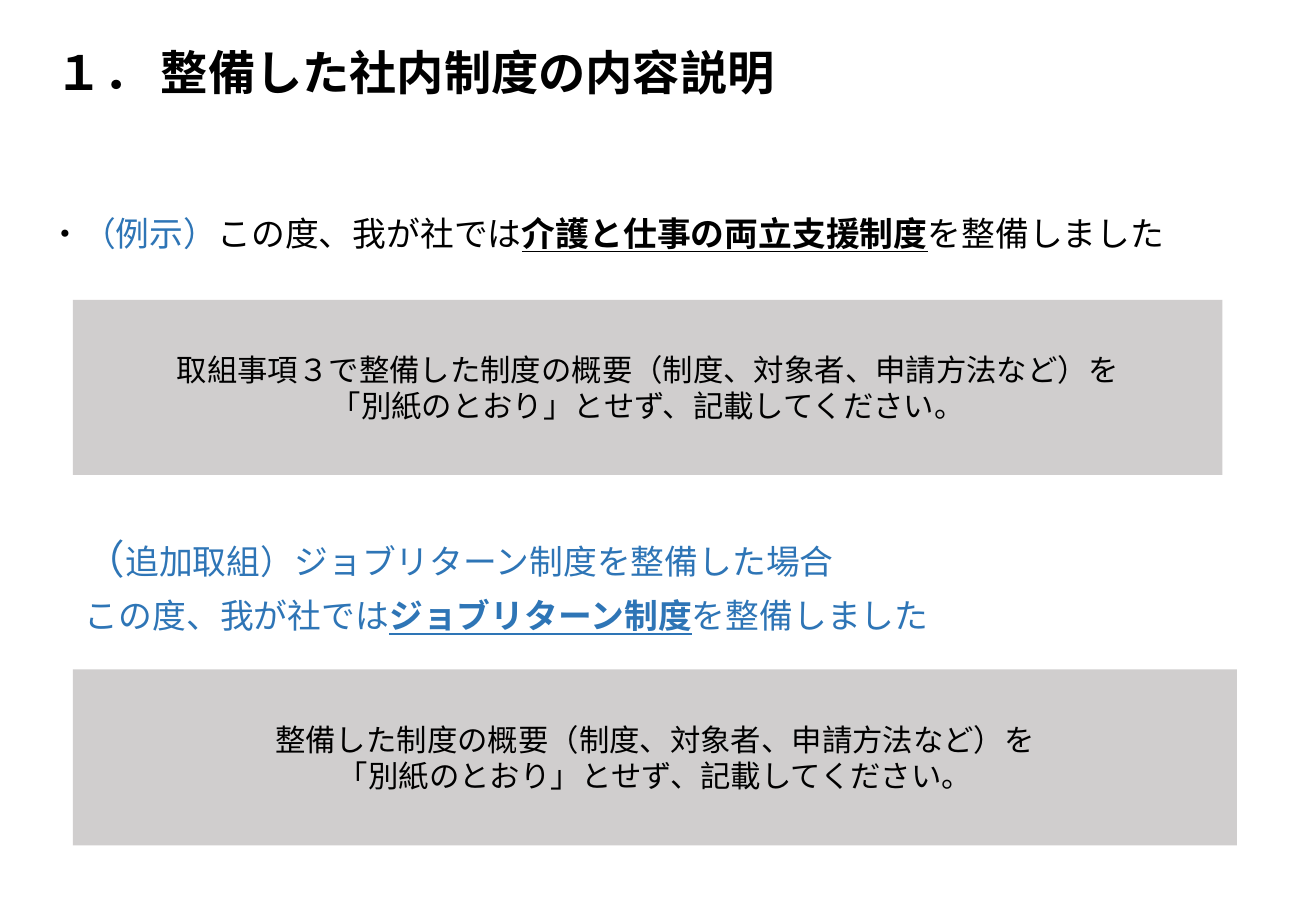
from pptx import Presentation
from pptx.dml.color import RGBColor
from pptx.enum.shapes import MSO_SHAPE
from pptx.enum.text import MSO_ANCHOR as Anchor, PP_ALIGN as Align
from pptx.util import Inches, Pt

COLORS = {"black": "000000", "blue": "2E75B6", "gray": "D0CECE"}

TITLE = ("１． 整備した社内制度の内容説明", {"bold": True, "size": 28})
STRONG = {"bold": True, "underline": True}
BLUE = {"color": "blue"}

STATEMENTS = [
    ((0.3, 1.74, 9.46, 0.41), "Arial", [
        [("・", {}), ("（例示）", BLUE), ("この度、我が社では", {}),
         ("介護と仕事の両立支援制度", STRONG), ("を整備しました", {})],
    ]),
    ((0.6, 4.39, 7.21, 0.91), "Calibri", [
        [("（", {**BLUE, "size": 24}),
         ("追加取組）ジョブリターン制度を整備した場合", BLUE)],
        [("この度、我が社では", BLUE),
         ("ジョブリターン制度", {**BLUE, **STRONG}),
         ("を整備しました", BLUE)],
    ]),
]

REQUEST = "「別紙のとおり」とせず、記載してください。"
SUMMARIES = [
    ((0.6, 2.47, 9.46, 1.44),
     "取組事項３で整備した制度の概要（制度、対象者、申請方法など）を"),
    ((0.6, 5.51, 9.58, 1.45),
     "整備した制度の概要（制度、対象者、申請方法など）を"),
]


def add_run(paragraph, text, font="Arial", size=20, color="black",
            bold=False, underline=False):
    run = paragraph.add_run()
    run.text = text
    run.font.name = font
    run.font.size = Pt(size)
    run.font.bold = bold
    run.font.underline = underline
    run.font.color.rgb = RGBColor.from_string(COLORS[color])


def write(frame, paragraphs, align=Align.LEFT, anchor=Anchor.TOP,
          spacing=1.0, before=0, **defaults):
    frame.word_wrap = True
    frame.vertical_anchor = anchor
    for index, runs in enumerate(paragraphs):
        paragraph = frame.add_paragraph() if index else frame.paragraphs[0]
        paragraph.alignment = align
        paragraph.line_spacing = spacing
        paragraph.space_before = Pt(before)
        for text, style in runs:
            add_run(paragraph, text, **{**defaults, **style})


def main():
    deck = Presentation()
    deck.slide_width, deck.slide_height = Inches(10.83), Inches(7.5)
    slide = deck.slides.add_slide(deck.slide_layouts[5])

    title = slide.shapes.title
    title.left, title.top, title.width, title.height = map(
        Inches, (0.36, 0.35, 6.2, 0.53))
    write(title.text_frame, [[TITLE]], anchor=Anchor.MIDDLE, spacing=0.9)

    for place, summary in SUMMARIES:
        box = slide.shapes.add_shape(MSO_SHAPE.RECTANGLE, *map(Inches, place))
        box.shadow.inherit = False
        box.fill.solid()
        box.fill.fore_color.rgb = RGBColor.from_string(COLORS["gray"])
        box.line.fill.background()
        write(box.text_frame, [[(summary, {})], [(REQUEST, {})]],
              align=Align.CENTER, anchor=Anchor.MIDDLE, font="Calibri", size=18)

    for place, font, lines in STATEMENTS:
        statement = slide.shapes.add_textbox(*map(Inches, place))
        write(statement.text_frame, lines, spacing=0.9, before=10, font=font)

    deck.save("out.pptx")


if __name__ == "__main__":
    main()
